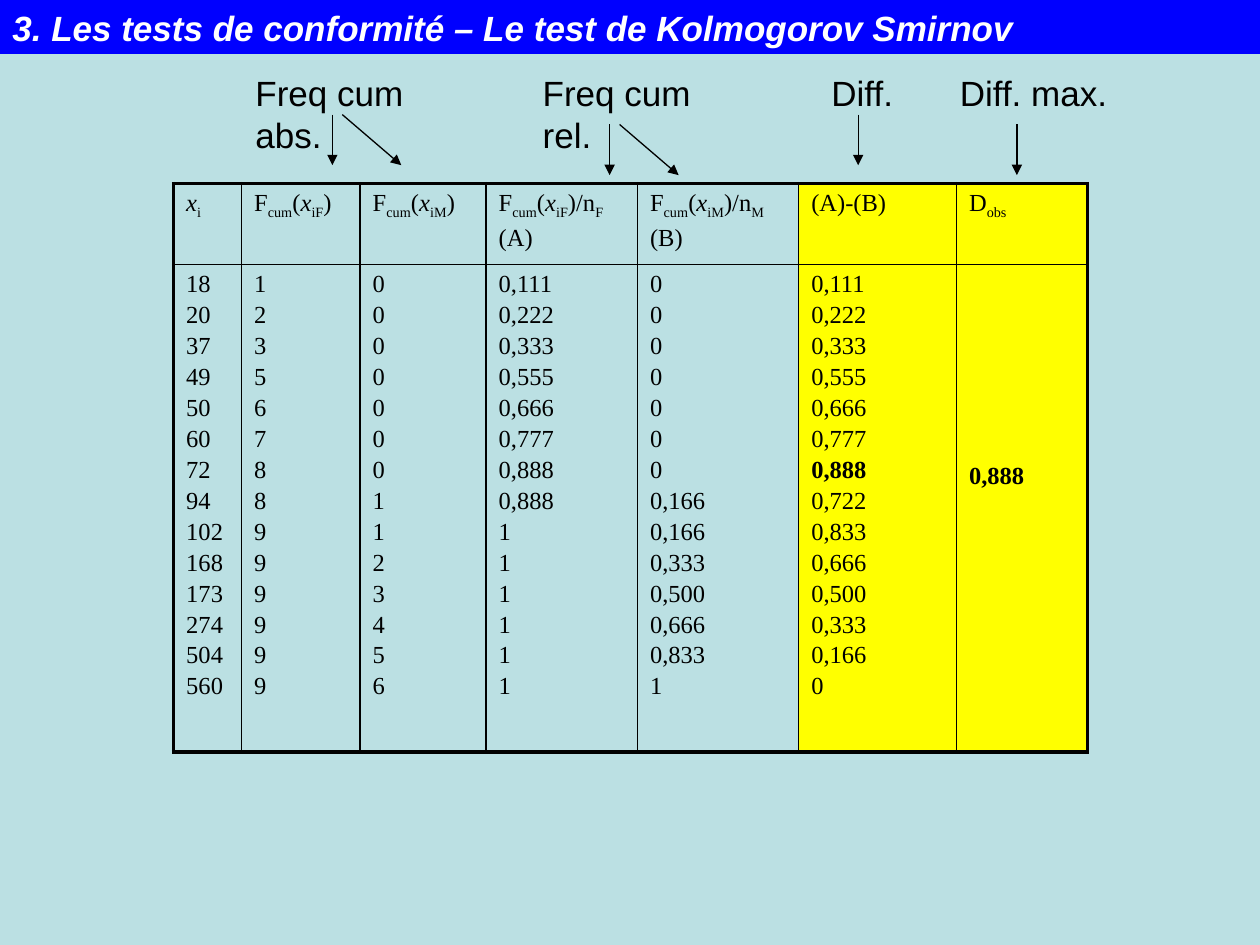
from pptx import Presentation
from pptx.dml.color import RGBColor
from pptx.enum.shapes import MSO_CONNECTOR as CONN, MSO_SHAPE as SHAPE
from pptx.enum.text import MSO_ANCHOR as ANCHOR, PP_ALIGN as ALIGN
from pptx.oxml.ns import qn
from pptx.util import Cm, Pt
from lxml.etree import SubElement

COLS = [1.37, 2.39, 2.54, 3.05, 3.25, 3.18, 2.64]
ROWS = [1.63, 9.83]
HEADERS = [
    ["*x|_i"],
    ["F|_cum|(|*x|_iF|)"],
    ["F|_cum|(|*x|_iM|)"],
    ["F|_cum|(|*x|_iF|)/n|_F", "(A)"],
    ["F|_cum|(|*x|_iM|)/n|_M", "(B)"],
    ["(A)-(B)"],
    ["D|_obs"],
]
VALUES = [
    "18 20 37 49 50 60 72 94 102 168 173 274 504 560",
    "1 2 3 5 6 7 8 8 9 9 9 9 9 9",
    "0 0 0 0 0 0 0 1 1 2 3 4 5 6",
    "0,111 0,222 0,333 0,555 0,666 0,777 0,888 0,888 1 1 1 1 1 1",
    "0 0 0 0 0 0 0 0,166 0,166 0,333 0,500 0,666 0,833 1",
    "0,111 0,222 0,333 0,555 0,666 0,777 #0,888 0,722 0,833 0,666 0,500 0,333 0,166 0",
    "#0,888",
]
LABELS = [
    ("Freq cum abs.", 4.9, 5.0, 1.0, [(1.8, 0.99, 0), (2.0, 0.99, 1.19)]),
    ("Freq cum rel.", 10.69, 4.67, 1.0, [(1.6, 1.19, 0), (1.8, 1.19, 1.19)]),
    ("Diff.", 16.51, 1.75, 0, [(0.79, 0.99, 0)]),
    ("Diff. max.", 19.1, 3.48, 0, [(1.4, 1.19, 0)]),
]


def rgb(code):
    return RGBColor.from_string(code)


def set_font(p, name, size, color):
    p.font.name = name
    p.font.size = Pt(size)
    p.font.color.rgb = rgb(color)


def add_title(s, x, y, w, h):
    sp = s.shapes.add_shape(SHAPE.RECTANGLE, Cm(x), Cm(y), Cm(w), Cm(h))
    sp.shadow.inherit = False
    sp.fill.solid()
    sp.fill.fore_color.rgb = rgb("0000FF")
    sp.line.fill.background()
    tf = sp.text_frame
    tf.vertical_anchor = ANCHOR.MIDDLE
    p = tf.paragraphs[0]
    p.text = "3. Les tests de conformité – Le test de Kolmogorov Smirnov"
    p.alignment = ALIGN.LEFT
    set_font(p, "Arial", 20, "FFFFFF")
    p.font.bold = p.font.italic = True


def add_arrow(s, x, y, dx, dy):
    c = s.shapes.add_connector(CONN.STRAIGHT, Cm(x), Cm(y), Cm(x + dx), Cm(y + dy))
    c.line.color.rgb = rgb("000000")
    c.line.width = Pt(0.75)
    SubElement(c.line._get_or_add_ln(), qn("a:tailEnd"), type="triangle")
    SubElement(c._element.spPr, qn("a:effectLst"))


def add_label(s, x, y, w, h, text, right_margin, arrows):
    tf = s.shapes.add_textbox(Cm(x), Cm(y), Cm(w), Cm(h)).text_frame
    tf.word_wrap = True
    tf.margin_right = Cm(right_margin)
    p = tf.paragraphs[0]
    p.text = text
    set_font(p, "Arial", 20, "000000")
    for ax, ay, dx in arrows:
        add_arrow(s, x + ax, y + ay, dx, 1.02)


def add_runs(p, markup):
    set_font(p, "Times New Roman", 14, "000000")
    p.space_before = Pt(2.2)
    for part in markup.split("|"):
        r = p.add_run()
        r.text = part.lstrip("*_#")
        if part.startswith("*"):
            r.font.italic = True
        elif part.startswith("#"):
            r.font.bold = True
        elif part.startswith("_"):
            r._r.get_or_add_rPr().set("baseline", "-25000")


def set_borders(cell, outer):
    tc_pr = cell._tc.get_or_add_tcPr()
    for side in "LRTB":
        width = Pt(2.25 if side in outer else 1)
        ln = SubElement(tc_pr, qn(f"a:ln{side}"), w=str(width))
        fill = SubElement(ln, qn("a:solidFill"))
        SubElement(fill, qn("a:srgbClr"), val="000000")


def fill_cell(cell, lines, outer, color):
    set_borders(cell, outer)
    if color:
        cell.fill.solid()
        cell.fill.fore_color.rgb = rgb(color)
    else:
        cell.fill.background()
    tf = cell.text_frame
    for i, line in enumerate(lines):
        add_runs(tf.add_paragraph() if i else tf.paragraphs[0], line)


def add_frequency_table(s, x, y):
    frame = s.shapes.add_table(len(ROWS), len(COLS), Cm(x), Cm(y),
                               Cm(sum(COLS)), Cm(sum(ROWS)))
    table = frame.table
    table.first_row = table.horz_banding = False
    for row, height in zip(table.rows, ROWS):
        row.height = Cm(height)
    last = len(COLS) - 1
    for j, (width, header, values) in enumerate(zip(COLS, HEADERS, VALUES)):
        table.columns[j].width = Cm(width)
        side = {0: "L", last: "R"}.get(j, "")
        color = "FFFF00" if j >= 5 else None
        fill_cell(table.cell(0, j), header, "T" + side, color)
        fill_cell(table.cell(1, j), values.split(), "B" + side, color)
    table.cell(1, last).margin_top = Cm(4)


def main():
    prs = Presentation()
    prs.slide_width, prs.slide_height = Cm(25.4), Cm(19.05)
    s = prs.slides.add_slide(prs.slide_layouts[6])
    s.background.fill.solid()
    s.background.fill.fore_color.rgb = rgb("BBE0E3")
    add_frequency_table(s, 3.5, 3.7)
    for text, x, w, right_margin, arrows in LABELS:
        add_label(s, x, 1.32, w, 1.09, text, right_margin, arrows)
    add_title(s, 0, 0, 25.4, 1.09)
    prs.save("out.pptx")


if __name__ == "__main__":
    main()
